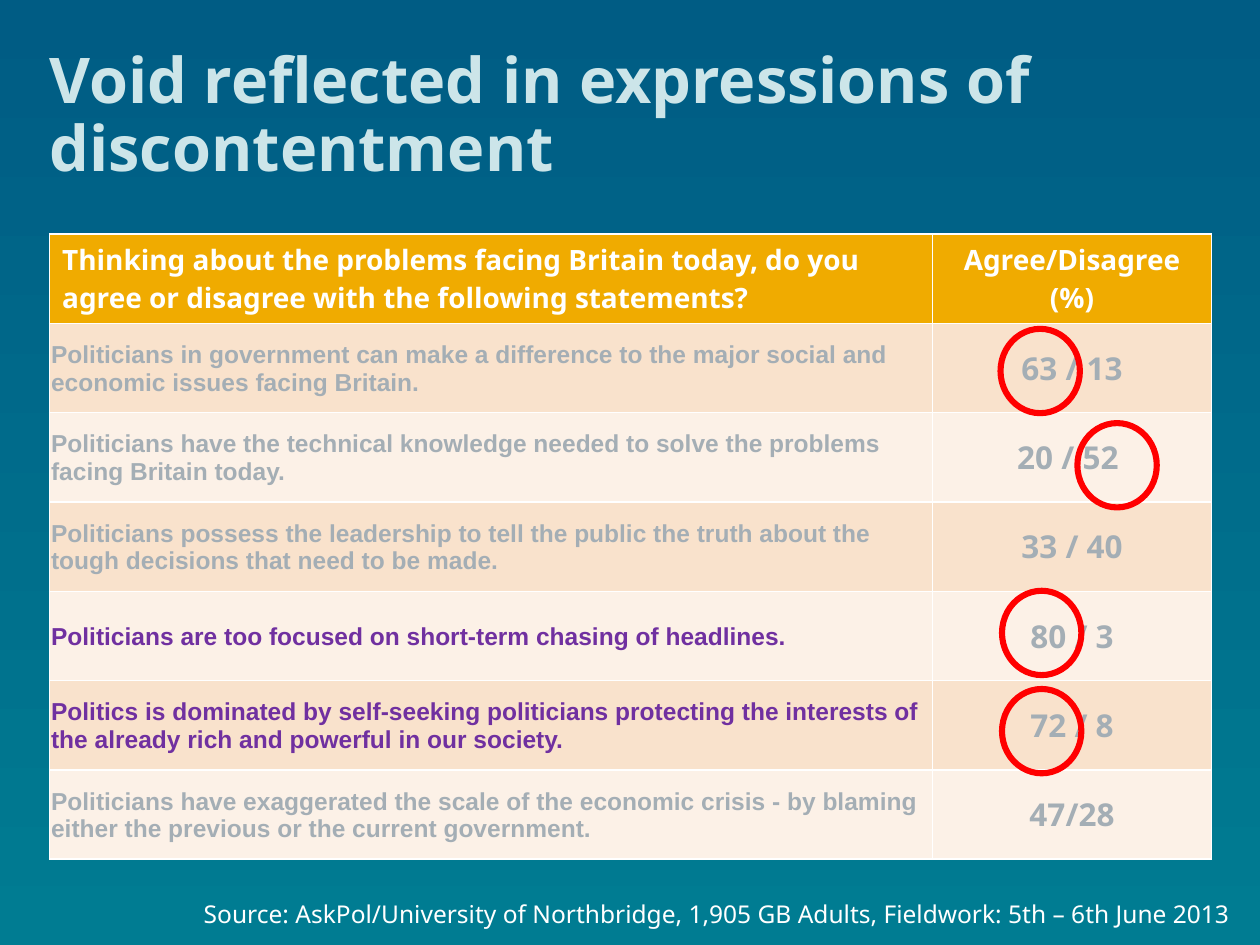
"""Builds a slide on public discontent with politicians."""
from pptx import Presentation
from pptx.dml.color import RGBColor
from pptx.enum.shapes import MSO_SHAPE
from pptx.enum.text import MSO_ANCHOR, PP_ALIGN
from pptx.util import Cm, Pt

TOP_BLUE = RGBColor(0x00, 0x5C, 0x84)
TEAL = RGBColor(0x00, 0x7C, 0x92)
PALE = RGBColor(0xCC, 0xE5, 0xE9)
WHITE = RGBColor(0xFF, 0xFF, 0xFF)
GOLD = RGBColor(0xF0, 0xAB, 0x00)
PEACH = RGBColor(0xF9, 0xE2, 0xCC)
CREAM = RGBColor(0xFC, 0xF1, 0xE7)
GREY = RGBColor(0xA4, 0xAE, 0xB5)
PURPLE = RGBColor(0x70, 0x30, 0xA0)
RED = RGBColor(0xFF, 0x00, 0x00)

TITLE = "Void reflected in expressions of discontentment"
SOURCE = ("Source: AskPol/University of Northbridge, 1,905 GB Adults, "
          "Fieldwork: 5th – 6th June 2013")
HEADER = ("Thinking about the problems facing Britain today, do you agree or "
          "disagree with the following statements?", "Agree/Disagree (%)")
STATEMENTS = [
    ("Politicians in government can make a difference to the major social "
     "and economic issues facing Britain.", "63 / 13", GREY),
    ("Politicians have the technical knowledge needed to solve the problems "
     "facing Britain today.", "20 / 52 ", GREY),
    ("Politicians possess the leadership to tell the public the truth about "
     "the tough decisions that need to be made.", "33 / 40", GREY),
    ("Politicians are too focused on short-term chasing of headlines.",
     "80 / 3", PURPLE),
    ("Politics is dominated by self-seeking politicians protecting the "
     "interests of the already rich and powerful in our society.",
     "72 / 8", PURPLE),
    ("Politicians have exaggerated the scale of the economic crisis - by "
     "blaming either the previous or the current government.",
     "47/28", GREY),
]
RINGS = [(20.2, 11.91), (20.2, 13.89), (20.17, 6.63), (21.72, 8.53)]
COL_WIDTHS = (17.8, 5.62)
ROW_HEIGHT = 1.8

TITLE_FONT = dict(name="Noto Sans", size=Pt(36), bold=True)
HEADER_FONT = dict(name="Noto Sans", size=Pt(16), bold=True)
STATEMENT_FONT = dict(name="Arial", size=Pt(14), bold=True)
SCORE_FONT = dict(name="Noto Sans", size=Pt(18), bold=True)
SOURCE_FONT = dict(name="Noto Sans", size=Pt(14), bold=False)
TIGHT = dict(margin_left=Cm(0.03), margin_right=Cm(0.03),
             margin_top=Cm(0.03), margin_bottom=0)
FLUSH = dict(margin_left=0, margin_right=0, margin_top=0, margin_bottom=0)


def set_all(obj, values):
    for name, value in values.items():
        setattr(obj, name, value)


def write(tf, text, font, color, align=PP_ALIGN.LEFT):
    p = tf.paragraphs[0]
    p.alignment = align
    r = p.add_run()
    r.text = text
    set_all(r.font, font)
    r.font.color.rgb = color
    return p


def add_text(slide, box, text, font, color, align=PP_ALIGN.LEFT, **frame):
    tf = slide.shapes.add_textbox(*map(Cm, box)).text_frame
    set_all(tf, dict(word_wrap=True, **frame))
    return write(tf, text, font, color, align)


def fill_cell(cell, fill, text, font, color, align=PP_ALIGN.LEFT, **frame):
    cell.fill.solid()
    cell.fill.fore_color.rgb = fill
    set_all(cell, frame)
    write(cell.text_frame, text, font, color, align)


def add_background(slide):
    fill = slide.background.fill
    fill.gradient()
    fill.gradient_angle = 270
    for stop, color, position in zip(fill.gradient_stops, (TOP_BLUE, TEAL), (0, 1)):
        stop.color.rgb = color
        stop.position = position


def add_statements(slide):
    rows = len(STATEMENTS) + 1
    table = slide.shapes.add_table(
        rows, 2, Cm(1), Cm(4.72), Cm(sum(COL_WIDTHS)), Cm(ROW_HEIGHT * rows)).table
    for column, width in zip(table.columns, COL_WIDTHS):
        column.width = Cm(width)
    for row in table.rows:
        row.height = Cm(ROW_HEIGHT)
    for col, (text, align) in enumerate(zip(HEADER, (PP_ALIGN.LEFT, PP_ALIGN.CENTER))):
        fill_cell(table.cell(0, col), GOLD, text, HEADER_FONT, WHITE, align)
    middle = dict(vertical_anchor=MSO_ANCHOR.MIDDLE)
    for row, (text, score, color) in enumerate(STATEMENTS, 1):
        fill = PEACH if row % 2 else CREAM
        fill_cell(table.cell(row, 0), fill, text, STATEMENT_FONT, color,
                  **middle, **TIGHT)
        fill_cell(table.cell(row, 1), fill, score, SCORE_FONT, GREY,
                  PP_ALIGN.CENTER, **middle)


def add_rings(slide):
    for left, top in RINGS:
        sp = slide.shapes.add_shape(MSO_SHAPE.OVAL, Cm(left), Cm(top), Cm(1.6), Cm(1.7))
        sp.shadow.inherit = False
        sp.fill.background()
        sp.line.color.rgb = RED
        sp.line.width = Pt(3.5)


def main():
    prs = Presentation()
    set_all(prs, dict(slide_width=Cm(25.4), slide_height=Cm(19.05)))
    s = prs.slides.add_slide(prs.slide_layouts[6])
    add_background(s)
    p = add_text(s, (1, 0, 23.42, 3.73), TITLE, TITLE_FONT, PALE,
                 vertical_anchor=MSO_ANCHOR.BOTTOM, **FLUSH)
    p.line_spacing = 0.9
    add_statements(s)
    add_text(s, (0.56, 18, 24.5, 0.97), SOURCE, SOURCE_FONT, WHITE, PP_ALIGN.RIGHT)
    add_rings(s)
    prs.save("out.pptx")


if __name__ == "__main__":
    main()
